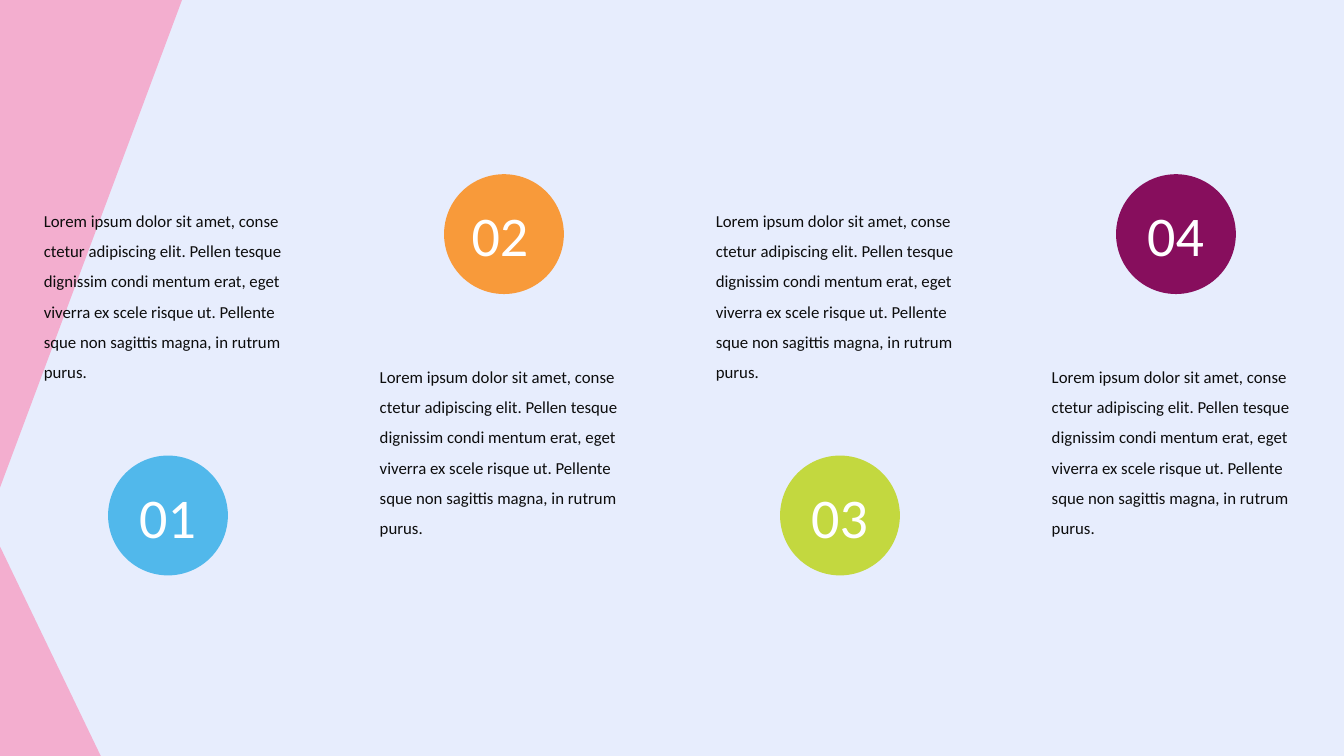
from dataclasses import dataclass

from pptx import Presentation
from pptx.dml.color import RGBColor
from pptx.enum.shapes import MSO_SHAPE
from pptx.enum.text import MSO_AUTO_SIZE, PP_ALIGN
from pptx.oxml.ns import qn
from pptx.util import Cm, Pt

# Content
BODY = (
    "Lorem ipsum dolor sit amet, conse ctetur adipiscing elit. "
    "Pellen tesque dignissim condi mentum erat, eget viverra ex scele "
    "risque ut. Pellente sque non sagittis magna, in rutrum purus."
)
# number, circle colour, circle above the text, sideways shift of the number
STEPS = [
    ("01", "51B8EB", False, 0),
    ("02", "F89A3A", True, -0.09),
    ("03", "C3D83F", False, 0),
    ("04", "870E5D", True, 0),
]
# left, top, width, height, pointing down
WEDGES = [
    (0, 13.77, 2.54, 5.28, False),
    (0, -0.03, 4.6, 12.32, True),
]


@dataclass(frozen=True)
class Theme:
    font: str = "Calibri"
    background: str = "E7EDFD"
    wedge: str = "F3AECF"
    body: str = "0D0D0D"
    number: str = "FFFFFF"
    body_size: int = 12
    number_size: int = 40


THEME = Theme()

# Layout in centimetres
SLIDE_W, SLIDE_H = 33.87, 19.05
PITCH = SLIDE_W / len(STEPS)
CIRCLE = 3.02
CIRCLE_LEFT = (PITCH - CIRCLE) / 2
CIRCLE_HIGH, CIRCLE_LOW = 4.39, 11.48
NUMBER_W, NUMBER_H, NUMBER_DROP = 3, 1.96, 0.55
BODY_W, BODY_H = 6.76, 4.8
BODY_LEFT = (PITCH - BODY_W) / 2
BODY_HIGH, BODY_LOW = 4.93, 8.86


def add_shape(slide, kind, box, color):
    s = slide.shapes.add_shape(kind, *map(Cm, box))
    s.shadow.inherit = False
    s.fill.solid()
    s.fill.fore_color.rgb = RGBColor.from_string(color)
    s.line.fill.background()
    return s


def add_text(slide, text, box, size, color, align=PP_ALIGN.LEFT, spacing=1.0):
    tf = slide.shapes.add_textbox(*map(Cm, box)).text_frame
    tf.word_wrap = True
    tf.auto_size = MSO_AUTO_SIZE.SHAPE_TO_FIT_TEXT
    p = tf.paragraphs[0]
    p.text = text
    p.alignment = align
    p.line_spacing = spacing
    p.font.name = THEME.font
    p.font.size = Pt(size)
    p.font.color.rgb = RGBColor.from_string(color)


def main():
    prs = Presentation()
    prs.slide_width, prs.slide_height = Cm(SLIDE_W), Cm(SLIDE_H)
    slide = prs.slides.add_slide(prs.slide_layouts[6])
    slide.background.fill.solid()
    slide.background.fill.fore_color.rgb = RGBColor.from_string(THEME.background)

    # Wedges on the left edge
    for *box, down in WEDGES:
        s = add_shape(slide, MSO_SHAPE.RIGHT_TRIANGLE, box, THEME.wedge)
        if down:
            s._element.spPr.find(qn("a:xfrm")).set("flipV", "1")

    # Steps, with circle and text swapping places
    for i, (number, color, circle_above, shift) in enumerate(STEPS):
        x = i * PITCH
        left = x + CIRCLE_LEFT
        top = CIRCLE_HIGH if circle_above else CIRCLE_LOW
        body_top = BODY_LOW if circle_above else BODY_HIGH
        add_shape(slide, MSO_SHAPE.OVAL, (left, top, CIRCLE, CIRCLE), color)
        add_text(slide, number,
                 (left + shift, top + NUMBER_DROP, NUMBER_W, NUMBER_H),
                 THEME.number_size, THEME.number, PP_ALIGN.CENTER)
        add_text(slide, BODY, (x + BODY_LEFT, body_top, BODY_W, BODY_H),
                 THEME.body_size, THEME.body, spacing=1.5)

    prs.save("out.pptx")


if __name__ == "__main__":
    main()
